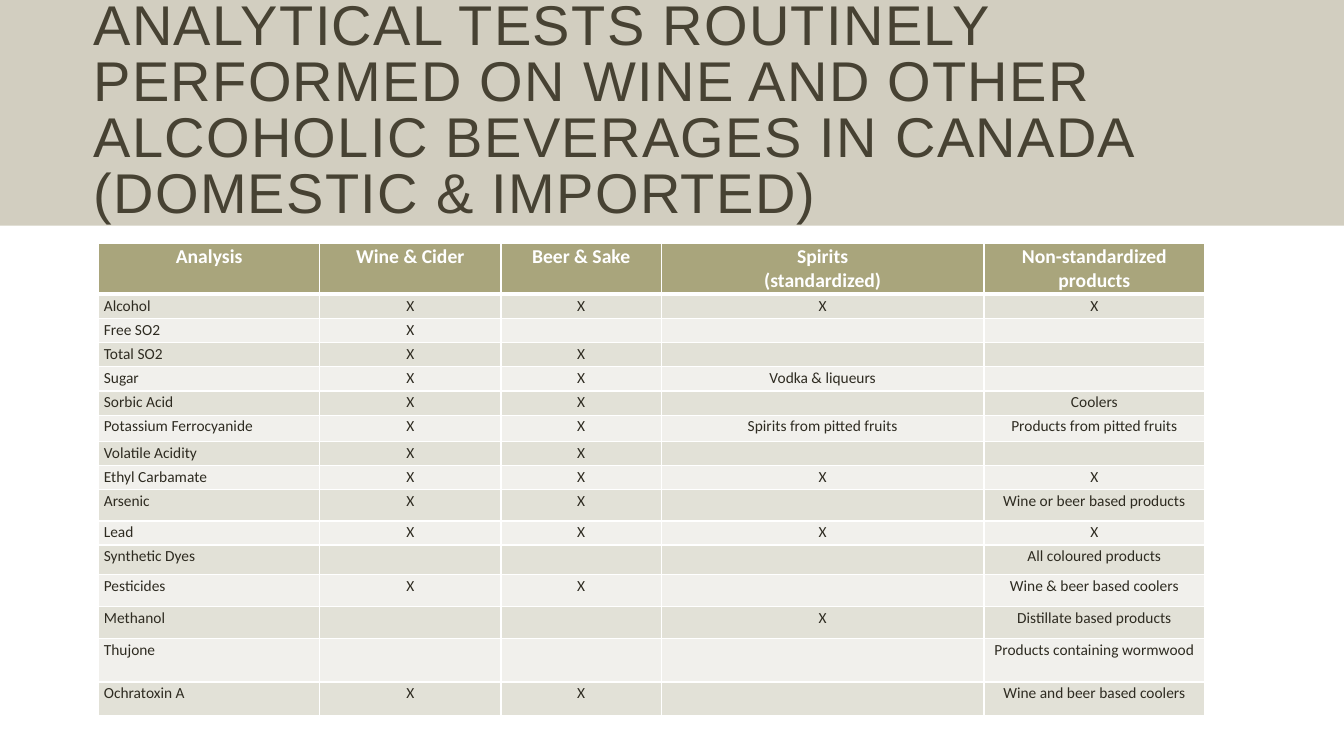
from lxml.etree import SubElement
from pptx import Presentation
from pptx.dml.color import RGBColor
from pptx.enum.shapes import MSO_SHAPE as SHAPE
from pptx.enum.text import MSO_ANCHOR as ANCHOR, PP_ALIGN as ALIGN
from pptx.oxml import parse_xml
from pptx.oxml.ns import nsdecls, qn
from pptx.util import Inches, Pt

BAND = RGBColor(0xD2, 0xCE, 0xC0)
TITLE = RGBColor(0x47, 0x42, 0x33)
HEADER = RGBColor(0xA9, 0xA5, 0x7C)
ODD = RGBColor(0xE2, 0xE1, 0xD7)
EVEN = RGBColor(0xF1, 0xF0, 0xEC)
INK = RGBColor(0x2E, 0x2B, 0x21)
WHITE = RGBColor(0xFF, 0xFF, 0xFF)

COLS = [2.19, 1.8, 1.59, 3.2, 2.19]
LINE = 0.24
# Row height, then the cells from left to right
ROWS = [
    (0.51, "Analysis", "Wine & Cider", "Beer & Sake", "Spirits\n(standardized)", "Non-standardized\nproducts"),
    (LINE, "Alcohol", "X", "X", "X", "X"),
    (LINE, "Free SO2", "X", "", "", ""),
    (LINE, "Total SO2", "X", "X", "", ""),
    (LINE, "Sugar", "X", "X", "Vodka & liqueurs", ""),
    (LINE, "Sorbic Acid", "X", "X", "", "Coolers"),
    (0.26, "Potassium Ferrocyanide", "X", "X", "Spirits from pitted fruits", "Products from pitted fruits"),
    (LINE, "Volatile Acidity", "X", "X", "", ""),
    (LINE, "Ethyl Carbamate", "X", "X", "X", "X"),
    (0.31, "Arsenic", "X", "X", "", "Wine or beer based products"),
    (LINE, "Lead", "X", "X", "X", "X"),
    (0.29, "Synthetic Dyes", "", "", "", "All coloured products"),
    (0.32, "Pesticides", "X", "X", "", "Wine & beer based coolers"),
    (0.32, "Methanol", "", "", "X", "Distillate based products"),
    (0.43, "Thujone", "", "", "", "Products containing wormwood"),
    (0.33, "Ochratoxin A", "X", "X", "", "Wine and beer based coolers"),
]


def add_run(p, text, font, size, color, bold=False):
    r = p.add_run()
    r.text = text
    r.font.name, r.font.size, r.font.bold = font, Pt(size), bold
    r.font.color.rgb = color
    return r


def set_borders(cell, bottom):
    tcPr = cell._tc.get_or_add_tcPr()
    for i, side in enumerate(("L", "R", "T", "B")):
        width = Pt(bottom if side == "B" else 1)
        tcPr.insert(i, parse_xml(
            f'<a:ln{side} {nsdecls("a")} w="{width}"><a:solidFill>'
            f'<a:srgbClr val="{WHITE}"/></a:solidFill></a:ln{side}>'))


prs = Presentation()
prs.slide_width, prs.slide_height = Inches(13.33), Inches(7.5)
s = prs.slides.add_slide(prs.slide_layouts[6])

# Title band
band = s.shapes.add_shape(SHAPE.RECTANGLE, 0, 0, prs.slide_width, Inches(2.24))
band.shadow.inherit = False
band.fill.solid()
band.fill.fore_color.rgb = BAND
band.line.fill.background()

# Title
sp = s.shapes.add_textbox(Inches(0.83), Inches(0.3), Inches(11.64), Inches(1.64))
tf = sp.text_frame
tf.word_wrap = True
tf.vertical_anchor = ANCHOR.MIDDLE
p = tf.paragraphs[0]
p.line_spacing = 0.83
r = add_run(p, "ANALYTICAL TESTS ROUTINELY PERFORMED ON WINE AND OTHER "
            "ALCOHOLIC BEVERAGES IN CANADA (DOMESTIC & IMPORTED)", "Arial", 40, TITLE)
r.font._element.set("spc", "100")

# Table grid
heights = [row[0] for row in ROWS]
table = s.shapes.add_table(len(ROWS), len(COLS), Inches(0.98), Inches(2.41),
                           Inches(sum(COLS)), Inches(sum(heights))).table
for col, width in zip(table.columns, COLS):
    col.width = Inches(width)
for row, height in zip(table.rows, heights):
    row.height = Inches(height)

# Table cells
for i, (_, *texts) in enumerate(ROWS):
    head = i == 0
    size = 14 if head else 11
    for j, text in enumerate(texts):
        cell = table.cell(i, j)
        cell.margin_left = cell.margin_right = Inches(0.05)
        cell.margin_top = cell.margin_bottom = Inches(0.02)
        cell.fill.solid()
        cell.fill.fore_color.rgb = HEADER if head else ODD if i % 2 else EVEN
        set_borders(cell, 3 if head else 1)
        p = cell.text_frame.paragraphs[0]
        p.alignment = ALIGN.CENTER if head or j else ALIGN.LEFT
        if not text:
            SubElement(p._p, qn("a:endParaRPr"), sz=str(size * 100))
            continue
        for k, part in enumerate(text.split("\n")):
            if k:
                p.add_line_break()
            add_run(p, part, "Calibri", size, WHITE if head else INK, head)

prs.save("out.pptx")
